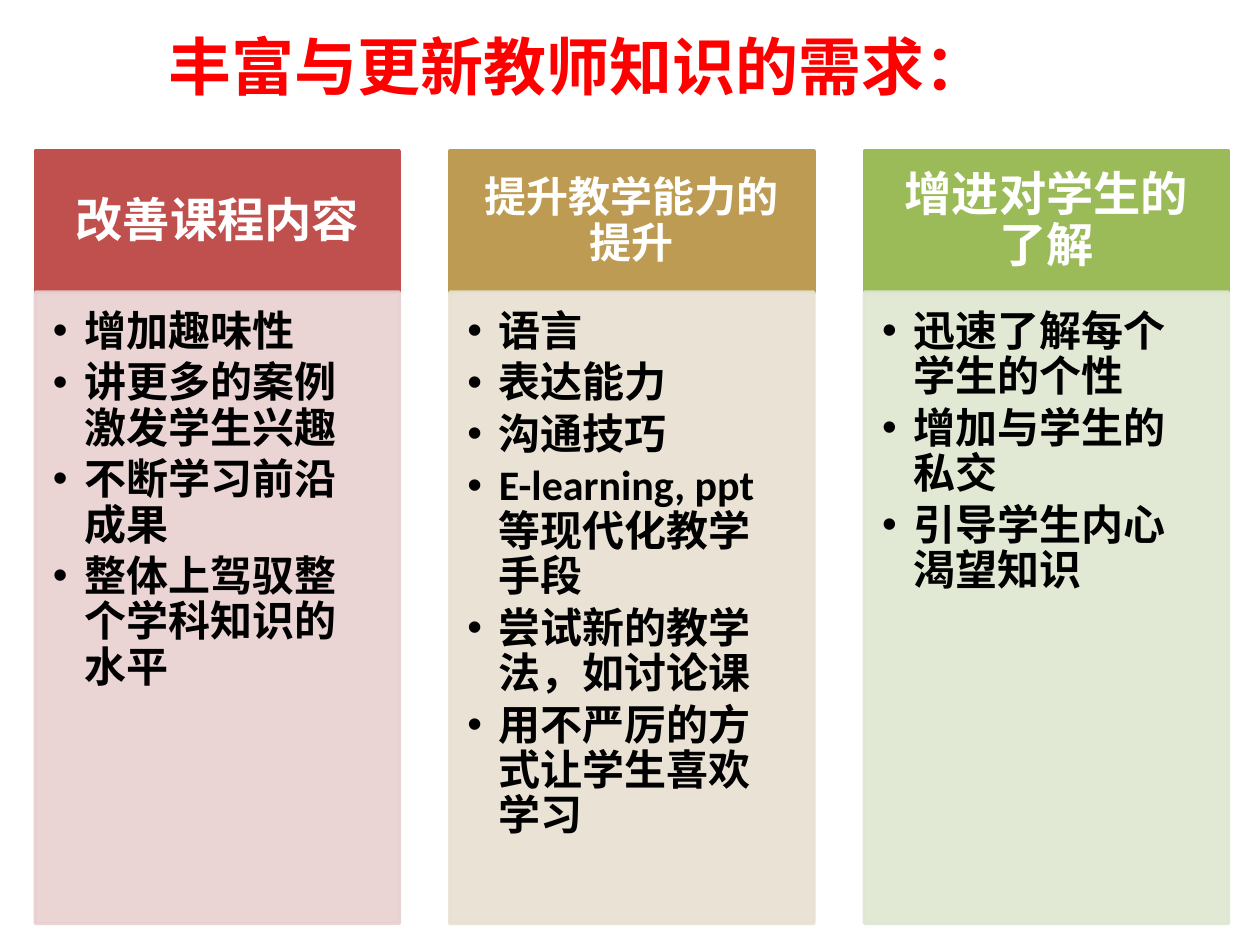
import pptx
import pptx.util
import pptx.dml.color
import pptx.enum.shapes
import pptx.enum.text
import pptx.oxml.ns
import pptx.oxml.xmlchemy
from dataclasses import dataclass

Pt = pptx.util.Pt
RGB = pptx.dml.color.RGBColor.from_string
ALIGN = pptx.enum.text.PP_ALIGN
ANCHOR = pptx.enum.text.MSO_ANCHOR


@dataclass(frozen=True)
class Theme:
    """Colours, fonts and type sizes of the slide."""
    title_color: str = "FF0000"
    head_color: str = "FFFFFF"
    body_color: str = "000000"
    title_font: str = "Lato"
    font: str = "Calibri"
    title_size: float = 36
    body_size: float = 24
    body_alpha: int = 90
    line_width: float = 2


@dataclass(frozen=True)
class Box:
    """A rectangle in points."""
    left: float
    top: float
    width: float
    height: float


@dataclass(frozen=True)
class Column:
    """A headed list with its colours."""
    head: str
    head_size: float
    head_fill: str
    body_fill: str
    items: tuple[str, ...]


THEME = Theme()
TITLE = Box(-96.5, -7.9, 853.2, 90)
HEAD = Box(20.2, 86.4, 208, 80.6)
BODY = Box(20.2, 167, 208, 360.7)
STEP = 236.9
INDENT = 18

COLUMNS = (
    Column("改善课程内容", 27, "C0504D", "E8D0D0",
           ("增加趣味性", "讲更多的案例激发学生兴趣", "不断学习前沿成果",
            "整体上驾驭整个学科知识的水平")),
    Column("提升教学能力的提升", 24, "BD9B53", "E8E1D1",
           ("语言", "表达能力", "沟通技巧", "E-learning, ppt等现代化教学手段",
            "尝试新的教学法，如讨论课", "用不严厉的方式让学生喜欢学习")),
    Column("增进对学生的了解", 27, "9BBB59", "DEE7D1",
           ("迅速了解每个学生的个性", "增加与学生的私交", "引导学生内心渴望知识")),
)


def place(sp, box: Box, shift: float = 0) -> None:
    """Move and size a shape."""
    sp.left, sp.top = Pt(box.left + shift), Pt(box.top)
    sp.width, sp.height = Pt(box.width), Pt(box.height)


def paint(sp, color: str, alpha: int = 100) -> None:
    """Give fill and line one colour and opacity."""
    sp.fill.solid()
    sp.fill.fore_color.rgb = RGB(color)
    sp.line.color.rgb = RGB(color)
    sp.line.width = Pt(THEME.line_width)
    if alpha < 100:
        for clr in sp.element.spPr.iter(pptx.oxml.ns.qn("a:srgbClr")):
            alpha_el = pptx.oxml.xmlchemy.OxmlElement("a:alpha")
            alpha_el.set("val", str(alpha * 1000))
            clr.append(alpha_el)


def set_frame(tf, anchor, left: float, top: float, right: float, bottom: float) -> None:
    """Set wrapping, anchor and insets."""
    tf.word_wrap = True
    tf.auto_size = pptx.enum.text.MSO_AUTO_SIZE.NONE
    tf.vertical_anchor = anchor
    tf.margin_left, tf.margin_top = Pt(left), Pt(top)
    tf.margin_right, tf.margin_bottom = Pt(right), Pt(bottom)


def format_runs(p, font: str, size: float, color: str) -> None:
    """Format every run of a paragraph in bold."""
    for r in p.runs:
        r.font.name, r.font.size, r.font.bold = font, Pt(size), True
        r.font.color.rgb = RGB(color)


def add_bullet(p) -> None:
    """Give a paragraph a hanging bullet."""
    pPr = p._p.get_or_add_pPr()
    pPr.set("marL", str(int(Pt(INDENT))))
    pPr.set("indent", str(-int(Pt(INDENT))))
    bullet = pptx.oxml.xmlchemy.OxmlElement("a:buChar")
    bullet.set("char", "•")
    pPr.append(bullet)


def draw_head(s, column: Column, shift: float) -> None:
    """Draw the coloured heading of a column."""
    sp = s.shapes.add_shape(pptx.enum.shapes.MSO_SHAPE.RECTANGLE, 0, 0, 0, 0)
    sp.shadow.inherit = False
    place(sp, HEAD, shift)
    paint(sp, column.head_fill)
    tf = sp.text_frame
    side, end = column.head_size * 0.56, column.head_size * 0.32
    set_frame(tf, ANCHOR.MIDDLE, side, end, side, end)
    tf.text = column.head
    p = tf.paragraphs[0]
    p.alignment, p.line_spacing = ALIGN.CENTER, 0.9
    format_runs(p, THEME.font, column.head_size, THEME.head_color)


def draw_list(s, sp, column: Column, shift: float) -> None:
    """Fill a body placeholder with the list of a column."""
    s.shapes.element.append(sp.element)
    place(sp, BODY, shift)
    paint(sp, column.body_fill, THEME.body_alpha)
    tf = sp.text_frame
    set_frame(tf, ANCHOR.TOP, 10, 10, 13.5, 15)
    tf.text = "\n".join(column.items)
    for p in tf.paragraphs:
        p.alignment, p.line_spacing = ALIGN.LEFT, 0.9
        p.space_before, p.space_after = Pt(0), Pt(3.6)
        add_bullet(p)
        format_runs(p, THEME.font, THEME.body_size, THEME.body_color)


def draw_title(sp, text: str) -> None:
    """Fill the title placeholder."""
    place(sp, TITLE)
    tf = sp.text_frame
    set_frame(tf, ANCHOR.MIDDLE, 7.2, 3.6, 7.2, 3.6)
    tf.text = text
    p = tf.paragraphs[0]
    p.alignment = ALIGN.CENTER
    format_runs(p, THEME.title_font, THEME.title_size, THEME.title_color)


def main() -> None:
    """Build and save the slide."""
    prs = pptx.Presentation()
    prs.slide_width, prs.slide_height = Pt(720), Pt(540)
    s = prs.slides.add_slide(prs.slide_layouts.get_by_name("Comparison"))
    title, *bodies = list(s.placeholders)
    draw_title(title, "丰富与更新教师知识的需求：")
    for i, (column, body) in enumerate(zip(COLUMNS, bodies)):
        draw_head(s, column, i * STEP)
        draw_list(s, body, column, i * STEP)
    for spare in bodies[len(COLUMNS):]:
        s.shapes.element.remove(spare.element)
    prs.save("out.pptx")


if __name__ == "__main__":
    main()
